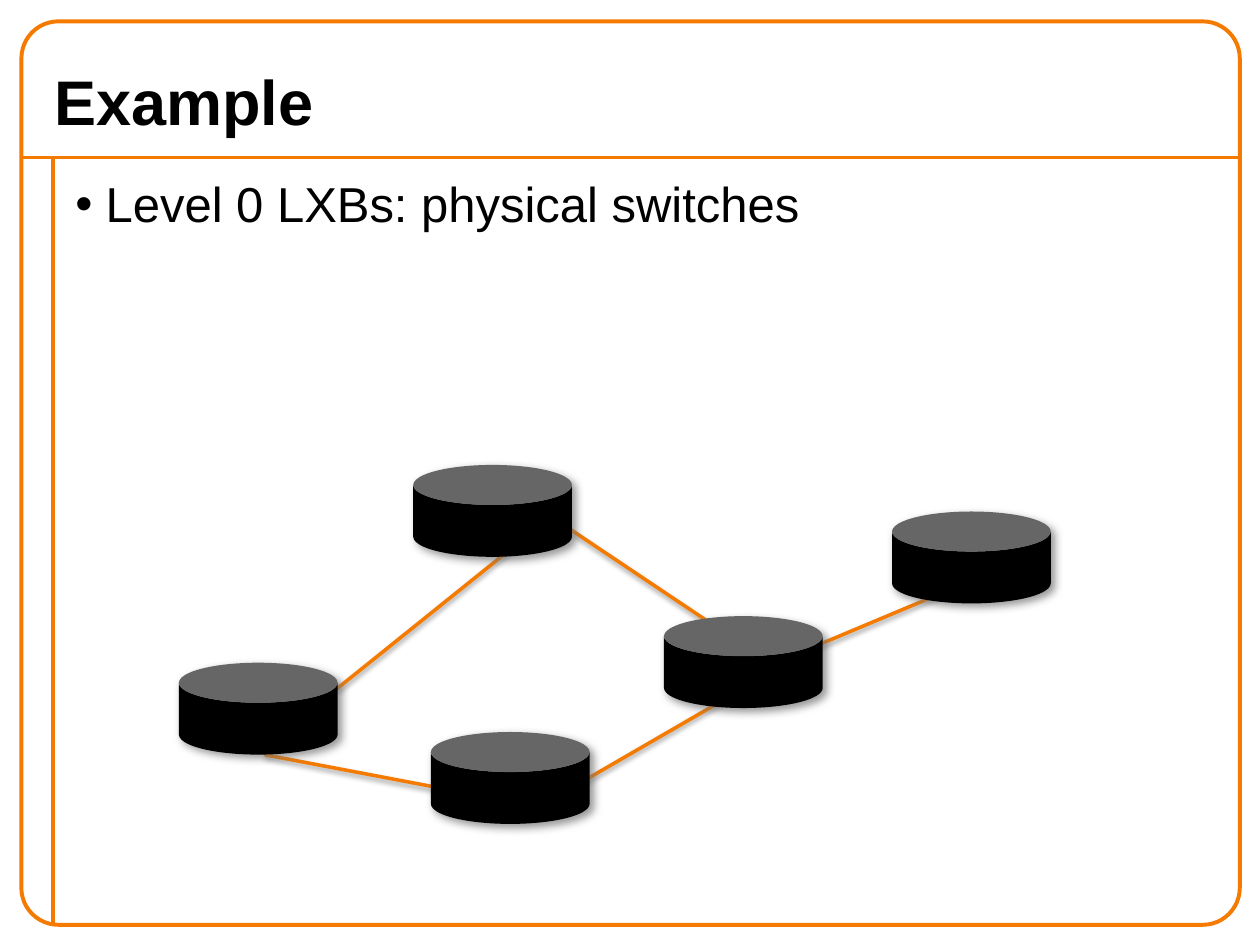
from lxml.etree import SubElement
from pptx import Presentation
from pptx.dml.color import RGBColor
from pptx.enum.shapes import MSO_CONNECTOR as CONNECTOR, MSO_SHAPE as SHAPE
from pptx.enum.text import MSO_ANCHOR as ANCHOR, PP_ALIGN as ALIGN
from pptx.oxml.ns import qn
from pptx.util import Inches, Pt

TITLE = "Example"
BULLET = "Level 0 LXBs: physical switches"
ORANGE, BLACK = "F47A00", "000000"
TITLE_FONT = {"name": "Arial", "size": Pt(36), "bold": True}
BODY_FONT = {"name": "Arial", "size": Pt(28), "bold": False}
RULES = [(0.17, 1.25, 9.83, 1.25), (0.42, 1.25, 0.42, 7.33)]
LINKS = [
    (2.67, 5.47, 4.2, 4.24),
    (4.39, 4.11, 5.6, 4.92),
    (4.49, 6.28, 5.89, 5.47),
    (2.1, 5.99, 3.63, 6.28),
    (6.3, 5.2, 7.61, 4.65),
]
SWITCHES = [(1.42, 5.26), (3.42, 5.81), (3.28, 3.69), (5.27, 4.89), (7.08, 4.06)]
SWITCH_SIZE = (1.26, 0.73)
LINK_SHADOW = {"color": BLACK, "alpha": 38, "blur": 3.1, "distance": 1.6, "angle": 90}
SWITCH_SHADOW = {"color": "777777", "alpha": 75, "blur": 5, "distance": 3, "angle": 45}


def inches(values):
    """Turn numbers into lengths."""
    return [Inches(value) for value in values]


def paint(color_format, color):
    """Set a colour from a hex string."""
    color_format.rgb = RGBColor.from_string(color)


def set_effects(shape, shadow=None):
    """Replace the theme effects with the given shadow or with none."""
    effects = SubElement(shape.element.spPr, qn("a:effectLst"))
    if shadow:
        outer = SubElement(
            effects, qn("a:outerShdw"),
            blurRad=str(Pt(shadow["blur"])), dist=str(Pt(shadow["distance"])),
            dir=str(shadow["angle"] * 60000), algn="ctr", rotWithShape="0",
        )
        color = SubElement(outer, qn("a:srgbClr"), val=shadow["color"])
        SubElement(color, qn("a:alpha"), val=str(shadow["alpha"] * 1000))


def add_line(slide, ends, width, shadow=None):
    """Add an orange straight line."""
    line = slide.shapes.add_connector(CONNECTOR.STRAIGHT, *inches(ends))
    paint(line.line.color, ORANGE)
    line.line.width = Pt(width)
    set_effects(line, shadow)


def add_frame(slide):
    """Add the rounded frame and its rules."""
    for ends in RULES:
        add_line(slide, ends, 2.25)
    frame = slide.shapes.add_shape(SHAPE.ROUNDED_RECTANGLE, *inches((0.17, 0.17, 9.67, 7.17)))
    frame.adjustments[0] = 0.041
    frame.fill.background()
    paint(frame.line.color, ORANGE)
    frame.line.width = Pt(2.25)
    set_effects(frame)


def write(shape, text, font, anchor):
    """Write one left-aligned paragraph and return it."""
    text_frame = shape.text_frame
    text_frame.word_wrap = True
    text_frame.vertical_anchor = anchor
    paragraph = text_frame.paragraphs[0]
    paragraph.alignment = ALIGN.LEFT
    run = paragraph.add_run()
    run.text = text
    for name, value in font.items():
        setattr(run.font, name, value)
    paint(run.font.color, BLACK)
    return paragraph


def add_title(slide):
    """Place and fill the title."""
    title = slide.shapes.title
    box = dict(zip(("left", "top", "width", "height"), inches((0.33, 0.42, 9.67, 0.75))))
    for name, value in box.items():
        setattr(title, name, value)
    write(title, TITLE, TITLE_FONT, ANCHOR.MIDDLE)


def add_body(slide):
    """Add the bulleted text."""
    body = slide.shapes.add_textbox(*inches((0.5, 1.33, 9.25, 6)))
    paragraph = write(body, BULLET, BODY_FONT, ANCHOR.TOP)
    properties = paragraph._p.get_or_add_pPr()
    properties.set("marL", str(Inches(0.24)))
    properties.set("indent", str(Inches(-0.24)))
    spacing = SubElement(properties, qn("a:spcBef"))
    SubElement(spacing, qn("a:spcPct"), val="50000")
    SubElement(properties, qn("a:buFont"), typeface="Arial")
    SubElement(properties, qn("a:buChar"), char="•")


def add_network(slide):
    """Add the links and the switches on top of them."""
    for ends in LINKS:
        add_line(slide, ends, 2, LINK_SHADOW)
    for position in SWITCHES:
        switch = slide.shapes.add_shape(SHAPE.CAN, *inches(position + SWITCH_SIZE))
        switch.adjustments[0] = 0.436
        switch.fill.solid()
        paint(switch.fill.fore_color, BLACK)
        switch.line.fill.background()
        set_effects(switch, SWITCH_SHADOW)


def main():
    """Build and save the slide."""
    presentation = Presentation()
    presentation.slide_width, presentation.slide_height = inches((10, 7.5))
    slide = presentation.slides.add_slide(presentation.slide_layouts[5])
    add_frame(slide)
    add_title(slide)
    add_body(slide)
    add_network(slide)
    presentation.save("out.pptx")


if __name__ == "__main__":
    main()
